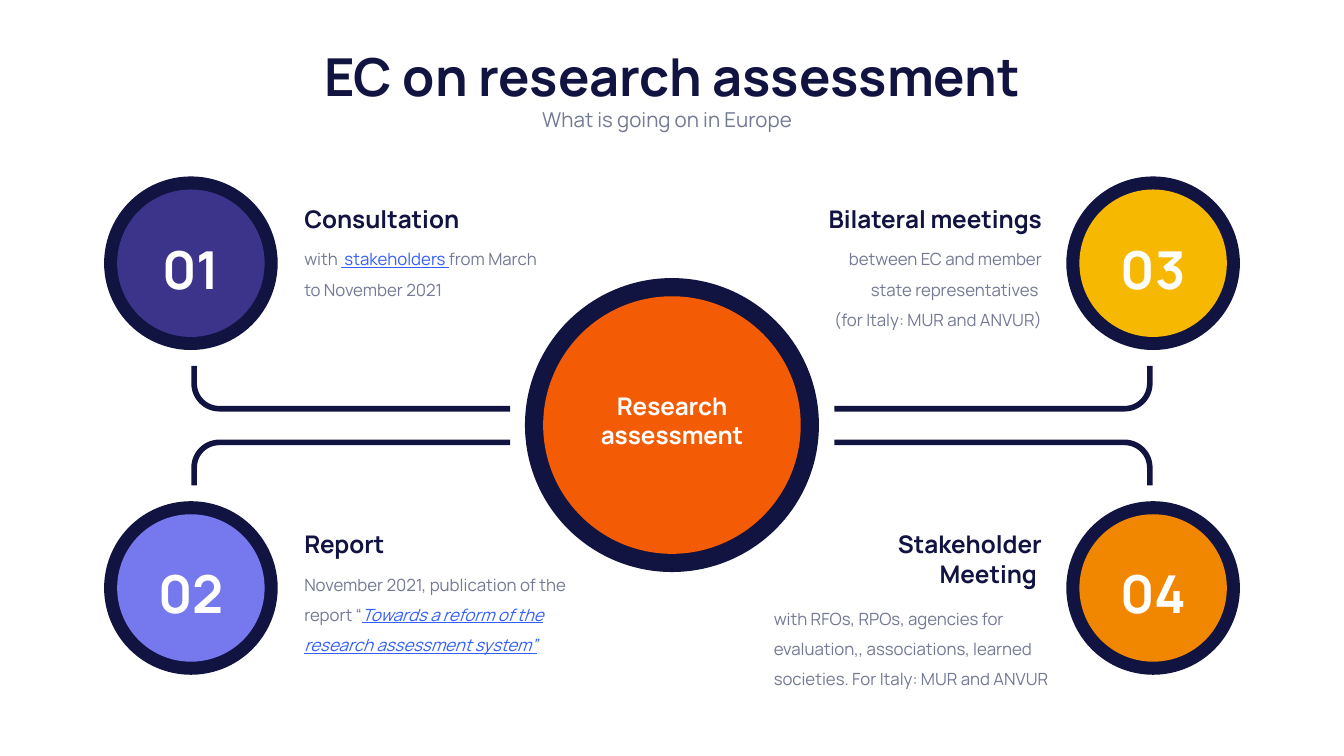
"""Build the research assessment slide: a central hub linked to four numbered steps."""
from dataclasses import dataclass
from math import cos, pi, sin

from pptx import Presentation
from pptx.dml.color import RGBColor
from pptx.enum.shapes import MSO_SHAPE
from pptx.enum.text import MSO_ANCHOR, MSO_AUTO_SIZE, PP_ALIGN
from pptx.util import Pt

NAVY = RGBColor(0x11, 0x13, 0x40)
GREY = RGBColor(0x74, 0x79, 0x94)
WHITE = RGBColor(0xFF, 0xFF, 0xFF)
LINK = RGBColor(0x33, 0x5F, 0xFE)
HUB = RGBColor(0xF3, 0x5B, 0x04)
PURPLE = RGBColor(0x3C, 0x34, 0x8B)
LILAC = RGBColor(0x76, 0x78, 0xED)
YELLOW = RGBColor(0xF7, 0xB8, 0x01)
ORANGE = RGBColor(0xF1, 0x87, 0x01)
FONT = "Manrope"
LEFT, RIGHT, TOP, BOTTOM = 102.25, 617.75, 141, 315


@dataclass(frozen=True)
class Box:
    left: float
    top: float
    width: float
    height: float


@dataclass(frozen=True)
class Style:
    size: float
    color: RGBColor
    bold: bool = False
    align: PP_ALIGN = PP_ALIGN.LEFT
    anchor: MSO_ANCHOR = MSO_ANCHOR.TOP
    spacing: float = 1.0


@dataclass(frozen=True)
class Link:
    text: str
    italic: bool = False


Paragraph = tuple[str | Link, ...]


@dataclass(frozen=True)
class Step:
    number: str
    x: float
    y: float
    color: RGBColor
    heading: list[Paragraph]
    heading_box: Box
    body: list[Paragraph]
    body_box: Box
    heading_align: PP_ALIGN = PP_ALIGN.LEFT
    body_align: PP_ALIGN = PP_ALIGN.LEFT


@dataclass(frozen=True)
class Bracket:
    inner_x: float
    outer_x: float
    rail_y: float
    end_y: float


STEPS = [
    Step("01", LEFT, TOP, PURPLE, [("Consultation",)], Box(160, 108, 132, 18.5),
         [("with ", Link(" stakeholders "), "from March to November 2021")],
         Box(160, 126.5, 132, 30)),
    Step("02", LEFT, BOTTOM, LILAC, [("Report",)], Box(160, 282, 132, 18.5),
         [("November 2021, publication of the report “",
           Link("Towards a reform of the research assessment system”", True))],
         Box(160, 300.75, 162, 46)),
    Step("03", RIGHT, TOP, YELLOW, [("Bilateral meetings",)], Box(429, 108, 132, 18.5),
         [("between EC and member state representatives ",), ("(for Italy: MUR and ANVUR)",)],
         Box(429, 126.5, 132, 46), PP_ALIGN.RIGHT, PP_ALIGN.RIGHT),
    Step("04", RIGHT, BOTTOM, ORANGE, [("Stakeholder",), ("Meeting ",)], Box(429, 282, 132, 34.5),
         [("with RFOs, RPOs, agencies for evaluation,, associations, learned societies. "
           "For Italy: MUR and ANVUR",)],
         Box(411.5, 319, 162, 46), PP_ALIGN.RIGHT),
]

BRACKETS = [Bracket(inner, outer, rail, end)
            for inner, outer in ((273.25, 104), (447, 616))
            for rail, end in ((219, 196), (237, 260))]


def add_text(shapes, box: Box, paragraphs: list[Paragraph], style: Style) -> None:
    s = shapes.add_textbox(Pt(box.left), Pt(box.top), Pt(box.width), Pt(box.height))
    tf = s.text_frame
    tf.word_wrap = True
    tf.auto_size = MSO_AUTO_SIZE.SHAPE_TO_FIT_TEXT
    tf.vertical_anchor = style.anchor
    tf.margin_left = tf.margin_right = Pt(3)
    tf.margin_top = tf.margin_bottom = Pt(1.5)
    for i, parts in enumerate(paragraphs):
        p = tf.add_paragraph() if i else tf.paragraphs[0]
        p.alignment = style.align
        p.line_spacing = style.spacing
        for part in parts:
            linked = isinstance(part, Link)
            r = p.add_run()
            r.text = part.text if linked else part
            r.font.name = FONT
            r.font.size = Pt(style.size)
            r.font.bold = style.bold
            r.font.color.rgb = LINK if linked else style.color
            if linked:
                r.font.underline = True
                r.font.italic = part.italic


def add_circle(shapes, x: float, y: float, diameter: float, color: RGBColor) -> None:
    s = shapes.add_shape(MSO_SHAPE.OVAL, Pt(x - diameter / 2), Pt(y - diameter / 2),
                         Pt(diameter), Pt(diameter))
    s.shadow.inherit = False
    s.fill.solid()
    s.fill.fore_color.rgb = color
    s.line.fill.background()


def add_ringed_circle(shapes, x: float, y: float, outer: float, inner: float,
                      color: RGBColor) -> None:
    add_circle(shapes, x, y, outer, NAVY)
    add_circle(shapes, x, y, inner, color)


def add_bracket(shapes, bracket: Bracket, radius: float = 13.5, steps: int = 16) -> None:
    dx = radius if bracket.outer_x > bracket.inner_x else -radius
    dy = radius if bracket.end_y > bracket.rail_y else -radius
    cx, cy = bracket.outer_x - dx, bracket.rail_y + dy
    angles = [pi / 2 * i / steps for i in range(steps + 1)]
    points = [(Pt(cx + dx * sin(a)), Pt(cy - dy * cos(a))) for a in angles]
    points.append((Pt(bracket.outer_x), Pt(bracket.end_y)))
    builder = shapes.build_freeform(Pt(bracket.inner_x), Pt(bracket.rail_y))
    builder.add_line_segments(points, close=False)
    s = builder.convert_to_shape()
    s.shadow.inherit = False
    s.fill.background()
    s.line.color.rgb = NAVY
    s.line.width = Pt(3)


def add_step(shapes, step: Step) -> None:
    add_ringed_circle(shapes, step.x, step.y, 93, 79, step.color)
    add_text(shapes, Box(step.x - 23, step.y - 15.5, 46, 36.5), [(step.number,)],
             Style(28, WHITE, True, PP_ALIGN.CENTER, MSO_ANCHOR.MIDDLE))
    add_text(shapes, step.heading_box, step.heading,
             Style(13, NAVY, True, step.heading_align, MSO_ANCHOR.BOTTOM))
    add_text(shapes, step.body_box, step.body,
             Style(9, GREY, align=step.body_align, spacing=1.5))


def main() -> None:
    prs = Presentation()
    prs.slide_width, prs.slide_height = Pt(720), Pt(405)
    shapes = prs.slides.add_slide(prs.slide_layouts[6]).shapes
    add_text(shapes, Box(45, 22.5, 630, 36.5), [("EC on research assessment",)],
             Style(28, NAVY, True, PP_ALIGN.CENTER, MSO_ANCHOR.BOTTOM))
    add_text(shapes, Box(42.5, 56, 630, 16), [("What is going on in Europe",)],
             Style(11, GREY, align=PP_ALIGN.CENTER))
    add_ringed_circle(shapes, 360, 227.75, 157.5, 138, HUB)
    add_text(shapes, Box(307.5, 208, 105, 34.5), [("Research",), ("assessment",)],
             Style(13, WHITE, True, PP_ALIGN.CENTER, MSO_ANCHOR.MIDDLE))
    for step in STEPS:
        add_step(shapes, step)
    for bracket in BRACKETS:
        add_bracket(shapes, bracket)
    prs.save("out.pptx")


if __name__ == "__main__":
    main()
